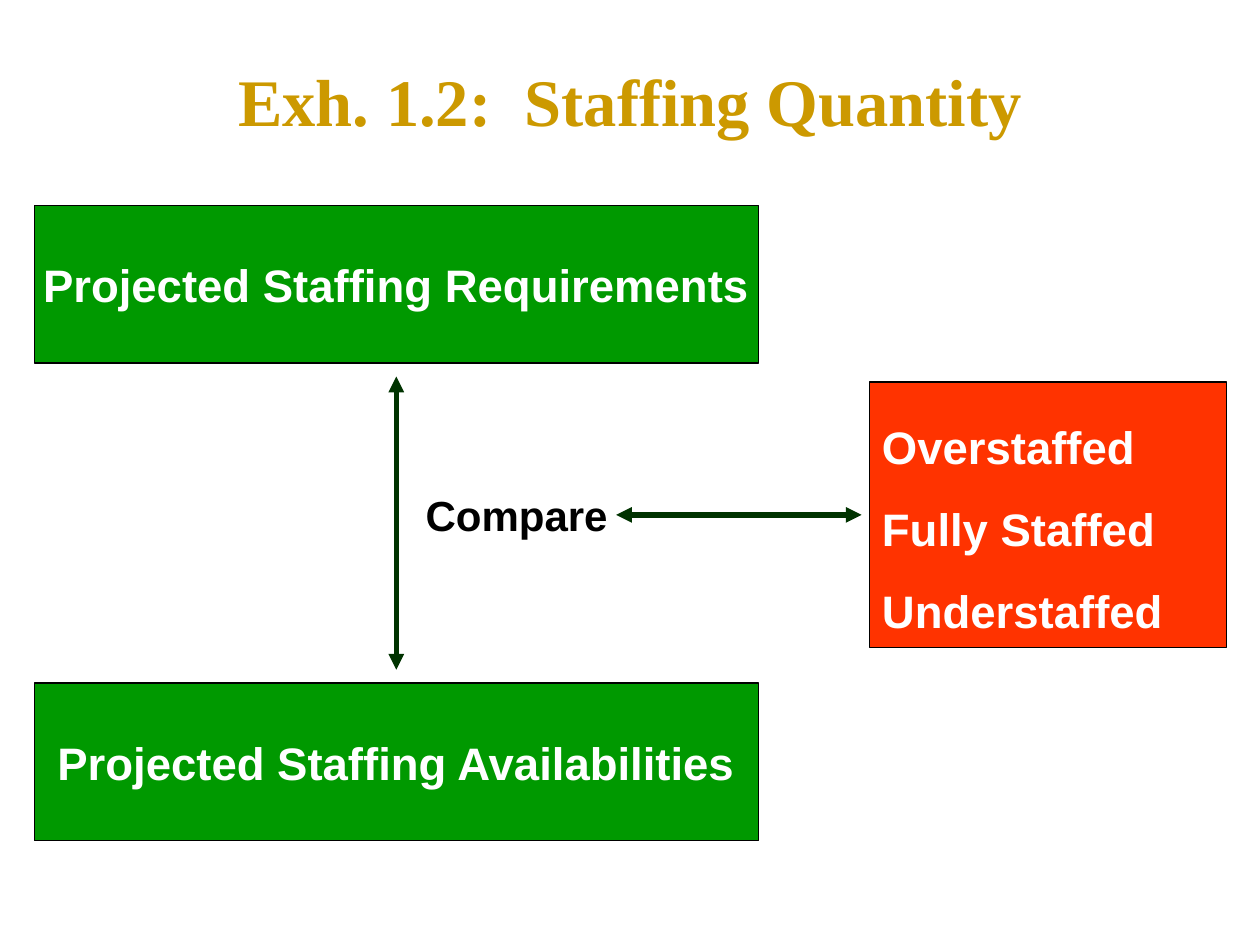
from dataclasses import dataclass

from lxml.etree import SubElement
from pptx import Presentation
from pptx.dml.color import RGBColor as Rgb
from pptx.enum.shapes import MSO_CONNECTOR as Connector, MSO_SHAPE as Shape
from pptx.enum.text import MSO_ANCHOR as Anchor, MSO_AUTO_SIZE as AutoSize, PP_ALIGN as Align
from pptx.oxml.ns import qn
from pptx.util import Cm, Pt


@dataclass(frozen=True)
class Theme:
    gold: Rgb = Rgb(0xCC, 0x99, 0x00)
    green: Rgb = Rgb(0x00, 0x99, 0x00)
    red: Rgb = Rgb(0xFF, 0x33, 0x00)
    arrow: Rgb = Rgb(0x00, 0x33, 0x00)
    white: Rgb = Rgb(0xFF, 0xFF, 0xFF)
    black: Rgb = Rgb(0x00, 0x00, 0x00)
    heading_font: str = "Times New Roman"
    body_font: str = "Arial"
    heading_size: Pt = Pt(38)
    panel_size: Pt = Pt(26)
    label_size: Pt = Pt(24)
    outline: Pt = Pt(0.75)
    arrow_width: Pt = Pt(3)


THEME = Theme()


@dataclass(frozen=True)
class Box:
    left: int
    top: int
    width: int
    height: int

    @property
    def right(self):
        return self.left + self.width

    @property
    def bottom(self):
        return self.top + self.height

    @property
    def center(self):
        return self.left + self.width // 2

    @property
    def middle(self):
        return self.top + self.height // 2

    @property
    def bounds(self):
        return self.left, self.top, self.width, self.height


def write(frame, lines, size, color, font=THEME.body_font, align=Align.CENTER,
          wrap=False, spacing=None):
    frame.auto_size = AutoSize.NONE
    frame.word_wrap = wrap
    frame.vertical_anchor = Anchor.MIDDLE
    for index, line in enumerate(lines):
        paragraph = frame.add_paragraph() if index else frame.paragraphs[0]
        paragraph.alignment = align
        paragraph.line_spacing = spacing
        run = paragraph.add_run()
        run.text = line
        run.font.name = font
        run.font.size = size
        run.font.bold = True
        run.font.color.rgb = color


def add_heading(slide, box, wording):
    heading = slide.shapes.title
    heading.left, heading.top, heading.width, heading.height = box.bounds
    write(heading.text_frame, [wording], THEME.heading_size, THEME.gold,
          font=THEME.heading_font, wrap=True)


def add_panel(slide, box, fill, lines, **layout):
    panel = slide.shapes.add_shape(Shape.RECTANGLE, *box.bounds)
    panel.shadow.inherit = False
    panel.fill.solid()
    panel.fill.fore_color.rgb = fill
    panel.line.color.rgb = THEME.black
    panel.line.width = THEME.outline
    write(panel.text_frame, lines, THEME.panel_size, THEME.white, **layout)


def add_label(slide, box, wording):
    label = slide.shapes.add_textbox(*box.bounds)
    write(label.text_frame, [wording], THEME.label_size, THEME.black)


def add_double_arrow(slide, start, end):
    arrow = slide.shapes.add_connector(Connector.STRAIGHT, *start, *end)
    arrow.line.color.rgb = THEME.arrow
    arrow.line.width = THEME.arrow_width
    line = arrow.line._get_or_add_ln()
    for tip in ("a:headEnd", "a:tailEnd"):
        SubElement(line, qn(tip), type="triangle")
    SubElement(arrow._element.spPr, qn("a:effectLst"))


def add_comparison(slide, requirements, availabilities, compare, outcomes):
    add_panel(slide, requirements, THEME.green, ["Projected Staffing Requirements"])
    add_panel(slide, availabilities, THEME.green, ["Projected Staffing Availabilities"])
    add_panel(slide, outcomes, THEME.red, ["Overstaffed", "Fully Staffed", "Understaffed"],
              align=Align.LEFT, wrap=True, spacing=1.5)
    add_label(slide, compare, "Compare")
    gap = Cm(0.27)
    add_double_arrow(slide, (requirements.center, requirements.bottom + gap),
                     (requirements.center, availabilities.top - gap))
    add_double_arrow(slide, (compare.right + Cm(0.05), outcomes.middle),
                     (outcomes.left - Cm(0.16), outcomes.middle))


def main():
    deck = Presentation()
    deck.slide_width, deck.slide_height = Cm(25.4), Cm(19.05)
    slide = deck.slides.add_slide(deck.slide_layouts[5])
    add_heading(slide, Box(Cm(0.64), Cm(0.64), Cm(24.13), Cm(2.74)),
                "Exh. 1.2:  Staffing Quantity")
    add_comparison(
        slide,
        requirements=Box(Cm(0.69), Cm(4.14), Cm(14.6), Cm(3.18)),
        availabilities=Box(Cm(0.69), Cm(13.77), Cm(14.6), Cm(3.18)),
        compare=Box(Cm(8.46), Cm(9.8), Cm(3.91), Cm(1.17)),
        outcomes=Box(Cm(17.53), Cm(7.7), Cm(7.19), Cm(5.36)),
    )
    deck.save("out.pptx")


if __name__ == "__main__":
    main()
